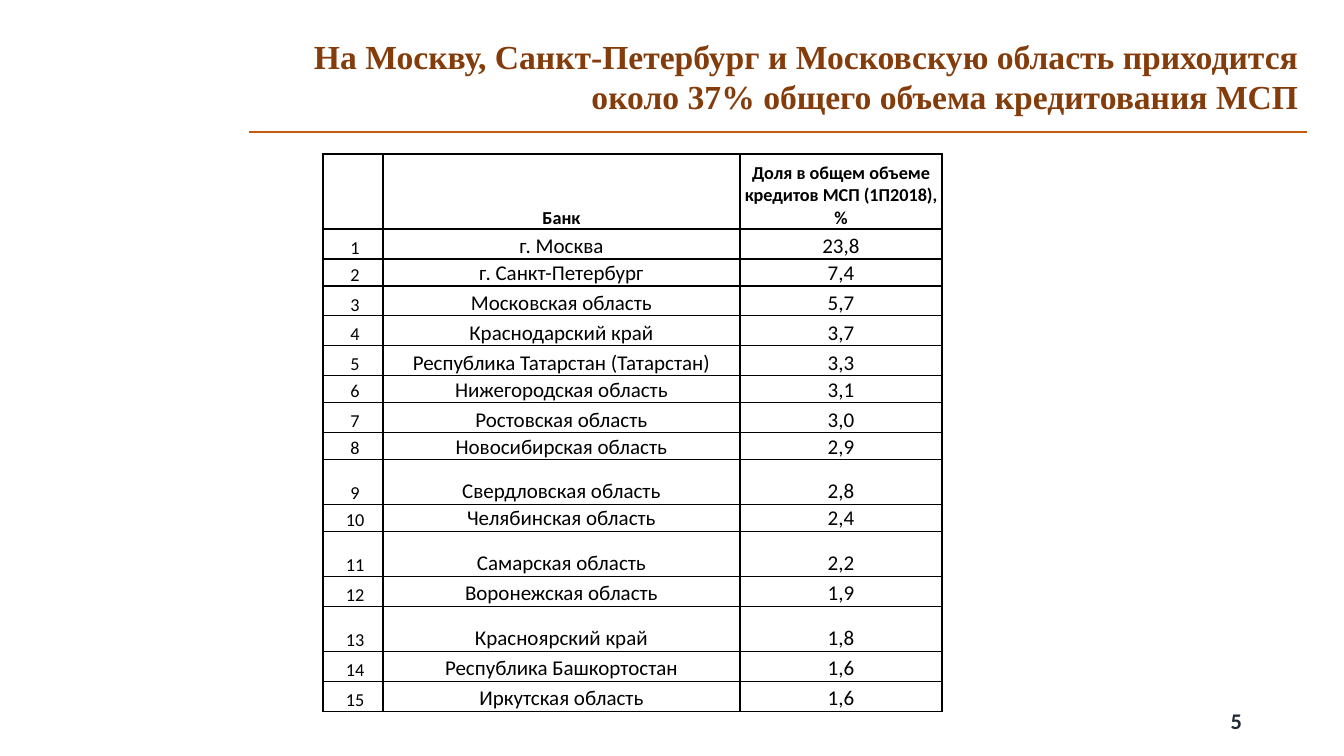
from pptx import Presentation
from pptx.dml.color import RGBColor
from pptx.enum.shapes import MSO_CONNECTOR
from pptx.enum.text import MSO_ANCHOR, PP_ALIGN
from pptx.util import Pt
from lxml.etree import SubElement
from pptx.oxml.ns import qn

TITLE = "На Москву, Санкт-Петербург и Московскую область приходится около 37% общего объема кредитования МСП"
PAGE_NUMBER = "5"
HEADER = ("", "Банк", "Доля в общем объеме кредитов МСП (1П2018), %")
REGIONS = [
    ("г. Москва", "23,8", 30),
    ("г. Санкт-Петербург", "7,4", 27),
    ("Московская область", "5,7", 30),
    ("Краснодарский край", "3,7", 30),
    ("Республика Татарстан (Татарстан)", "3,3", 30),
    ("Нижегородская область", "3,1", 27),
    ("Ростовская область", "3,0", 30),
    ("Новосибирская область", "2,9", 27),
    ("Свердловская область", "2,8", 45),
    ("Челябинская область", "2,4", 27),
    ("Самарская область", "2,2", 45),
    ("Воронежская область", "1,9", 30),
    ("Красноярский край", "1,8", 45),
    ("Республика Башкортостан", "1,6", 30),
    ("Иркутская область", "1,6", 30),
]
COLORS = {"title": "843C0B", "rule": "C55A11", "number": "222A35", "text": "000000"}
COLUMN_WIDTHS = (60, 357, 202)
HEADER_HEIGHT = 75
SLIDE_WIDTH, SLIDE_HEIGHT = 1344, 756
EMU_PER_PX = 12192000 / SLIDE_WIDTH


def px(length):
    return round(length * EMU_PER_PX)


def color(name):
    return RGBColor.from_string(COLORS[name])


def style(para, align, size, font, color_name, bold):
    para.alignment = align
    para.font.size = Pt(size)
    para.font.name = font
    para.font.bold = bold
    para.font.color.rgb = color(color_name)


def add_text(page, text, place, size, font, color_name, anchor):
    box = page.shapes.add_textbox(*map(px, place))
    frame = box.text_frame
    frame.word_wrap = True
    frame.vertical_anchor = anchor
    frame.text = text
    style(frame.paragraphs[0], PP_ALIGN.RIGHT, size, font, color_name, True)


def add_borders(cell):
    properties = cell._tc.get_or_add_tcPr()
    for position, side in enumerate(("lnL", "lnR", "lnT", "lnB")):
        line = SubElement(properties, qn(f"a:{side}"), w=str(Pt(1)))
        fill = SubElement(line, qn("a:solidFill"))
        SubElement(fill, qn("a:srgbClr"), val=COLORS["text"])
        properties.insert(position, line)


def fill_cell(cell, text, size, bold):
    cell.margin_left = cell.margin_right = cell.margin_top = px(1)
    cell.margin_bottom = 0
    cell.vertical_anchor = MSO_ANCHOR.BOTTOM
    cell.text = text
    style(cell.text_frame.paragraphs[0], PP_ALIGN.CENTER, size, "Calibri", "text", bold)
    cell.fill.background()
    add_borders(cell)


def add_regions(page):
    rows = [HEADER] + [(f" {rank}", name, share) for rank, (name, share, _) in enumerate(REGIONS, 1)]
    heights = [HEADER_HEIGHT] + [height for _, _, height in REGIONS]
    table = page.shapes.add_table(
        len(rows), len(COLUMN_WIDTHS), px(323), px(154), px(sum(COLUMN_WIDTHS)), px(sum(heights))
    ).table
    table.first_row = table.horz_banding = False
    for column, width in zip(table.columns, COLUMN_WIDTHS):
        column.width = px(width)
    for row_index, (texts, height) in enumerate(zip(rows, heights)):
        table.rows[row_index].height = px(height)
        for column_index, text in enumerate(texts):
            is_header = row_index == 0
            size = 13 if is_header or column_index == 0 else 15
            fill_cell(table.cell(row_index, column_index), text, size, is_header)


def main():
    deck = Presentation()
    deck.slide_width, deck.slide_height = px(SLIDE_WIDTH), px(SLIDE_HEIGHT)
    page = deck.slides.add_slide(deck.slide_layouts[6])
    rule = page.shapes.add_connector(MSO_CONNECTOR.STRAIGHT, px(249), px(132), px(1307), px(132))
    rule.line.color.rgb = color("rule")
    rule.line.width = Pt(1.5)
    SubElement(rule._element.spPr, qn("a:effectLst"))
    add_text(page, TITLE, (227, 31, 1081, 92), 24, "Times New Roman", "title", MSO_ANCHOR.TOP)
    add_text(page, PAGE_NUMBER, (950, 701, 302, 40), 16, "Calibri", "number", MSO_ANCHOR.MIDDLE)
    add_regions(page)
    deck.save("out.pptx")


if __name__ == "__main__":
    main()
